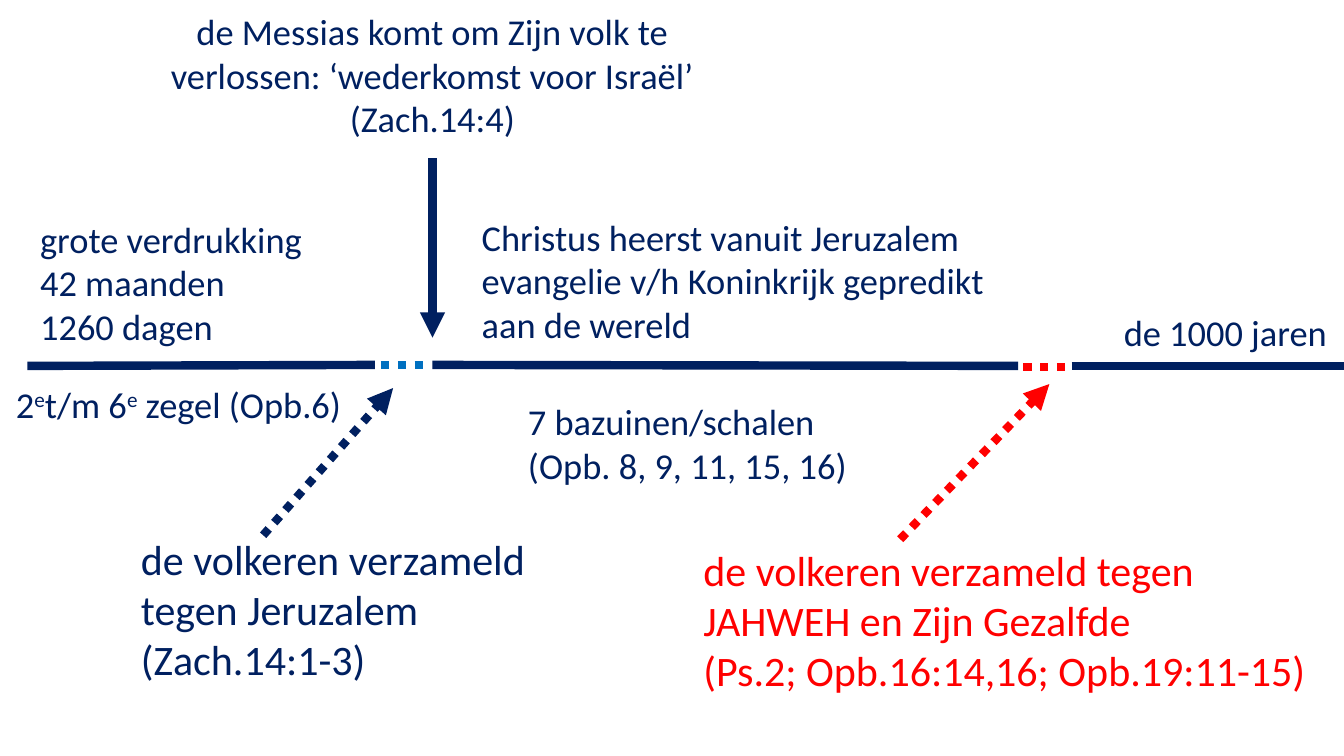
from dataclasses import dataclass

from lxml.etree import SubElement
from pptx import Presentation
from pptx.dml.color import RGBColor as RGB
from pptx.enum.dml import MSO_LINE_DASH_STYLE as Dash
from pptx.enum.shapes import MSO_CONNECTOR as Connector
from pptx.enum.text import MSO_AUTO_SIZE as AutoSize, PP_ALIGN as Align
from pptx.oxml.ns import qn
from pptx.util import Inches, Pt


@dataclass(frozen=True)
class Theme:
    font: str = "Calibri"
    navy: RGB = RGB(0x00, 0x20, 0x60)
    blue: RGB = RGB(0x00, 0x70, 0xC0)
    red: RGB = RGB(0xFF, 0x00, 0x00)
    body: Pt = Pt(26)
    large: Pt = Pt(30)
    stroke: Pt = Pt(6)


class Timeline:
    def __init__(self, prs, theme):
        self.theme = theme
        self.shapes = prs.slides.add_slide(prs.slide_layouts[6]).shapes
        self.width, self.height = prs.slide_width, prs.slide_height

    def x(self, percent):
        return round(self.width * percent / 100)

    def y(self, percent):
        return round(self.height * percent / 100)

    def text(self, left, top, width, height, lines, size=None, color=None, align=Align.LEFT):
        box = self.shapes.add_textbox(self.x(left), self.y(top), self.x(width), self.y(height))
        tf = box.text_frame
        tf.word_wrap = True
        tf.auto_size = AutoSize.SHAPE_TO_FIT_TEXT
        for i, line in enumerate(lines):
            p = tf.paragraphs[0] if i == 0 else tf.add_paragraph()
            p.alignment = align
            p.font.name = self.theme.font
            p.font.size = size or self.theme.body
            p.font.color.rgb = color or self.theme.navy
            for j, part in enumerate(line.split("^")):
                r = p.add_run()
                r.text = part
                if j % 2:
                    r._r.get_or_add_rPr().set("baseline", "30000")

    def line(self, start, end, color=None, dotted=False, arrow=False):
        (x1, y1), (x2, y2) = start, end
        c = self.shapes.add_connector(
            Connector.STRAIGHT, self.x(x1), self.y(y1), self.x(x2), self.y(y2))
        c.line.width = self.theme.stroke
        c.line.color.rgb = color or self.theme.navy
        if dotted:
            c.line.dash_style = Dash.ROUND_DOT
        if arrow:
            SubElement(c.line._get_or_add_ln(), qn("a:tailEnd"), type="triangle")
        SubElement(c._element.spPr, qn("a:effectLst"))


def main():
    prs = Presentation()
    prs.slide_width, prs.slide_height = Inches(13.33), Inches(7.5)
    theme = Theme()
    s = Timeline(prs, theme)

    s.line((2.03, 48.4), (27.9, 48.27))
    s.line((28.35, 48.27), (31.95, 48.27), theme.blue, dotted=True)
    s.line((32.18, 48.27), (75.75, 48.4))
    s.line((76.13, 48.53), (79.73, 48.53), theme.red, dotted=True)
    s.line((79.73, 48.4), (100, 48.4))

    s.line((32.18, 20.93), (32.18, 44.67), arrow=True)
    s.line((19.58, 70.8), (29.25, 51.33), dotted=True, arrow=True)
    s.line((66.98, 71.33), (78.08, 50.8), theme.red, dotted=True, arrow=True)

    s.text(11.93, 0.53, 40.5, 18.8,
           ["de Messias komt om Zijn volk te verlossen: ‘wederkomst voor Israël’ (Zach.14:4)"],
           align=Align.CENTER)
    s.text(2.25, 28, 23.55, 18.8, ["grote verdrukking", "42 maanden", "1260 dagen"])
    s.text(35.1, 27.73, 40.2, 18.8,
           ["Christus heerst vanuit Jeruzalem",
            "evangelie v/h Koninkrijk gepredikt aan de wereld"])
    s.text(82.88, 40.4, 23.55, 7.2, ["de 1000 jaren"])
    s.text(0.45, 49.87, 25.95, 7.2, ["2^e^t/m 6^e^ zegel (Opb.6)"])
    s.text(38.55, 52.13, 26.25, 13.07, ["7 bazuinen/schalen", "(Opb. 8, 9, 11, 15, 16)"])
    s.text(9.75, 69.87, 31.2, 21.6,
           ["de volkeren verzameld tegen Jeruzalem (Zach.14:1-3)"], theme.large)
    s.text(51.6, 71.33, 47.03, 21.6,
           ["de volkeren verzameld tegen JAHWEH en Zijn Gezalfde",
            "(Ps.2; Opb.16:14,16; Opb.19:11-15)"], theme.large, theme.red)

    prs.save("out.pptx")


if __name__ == "__main__":
    main()
